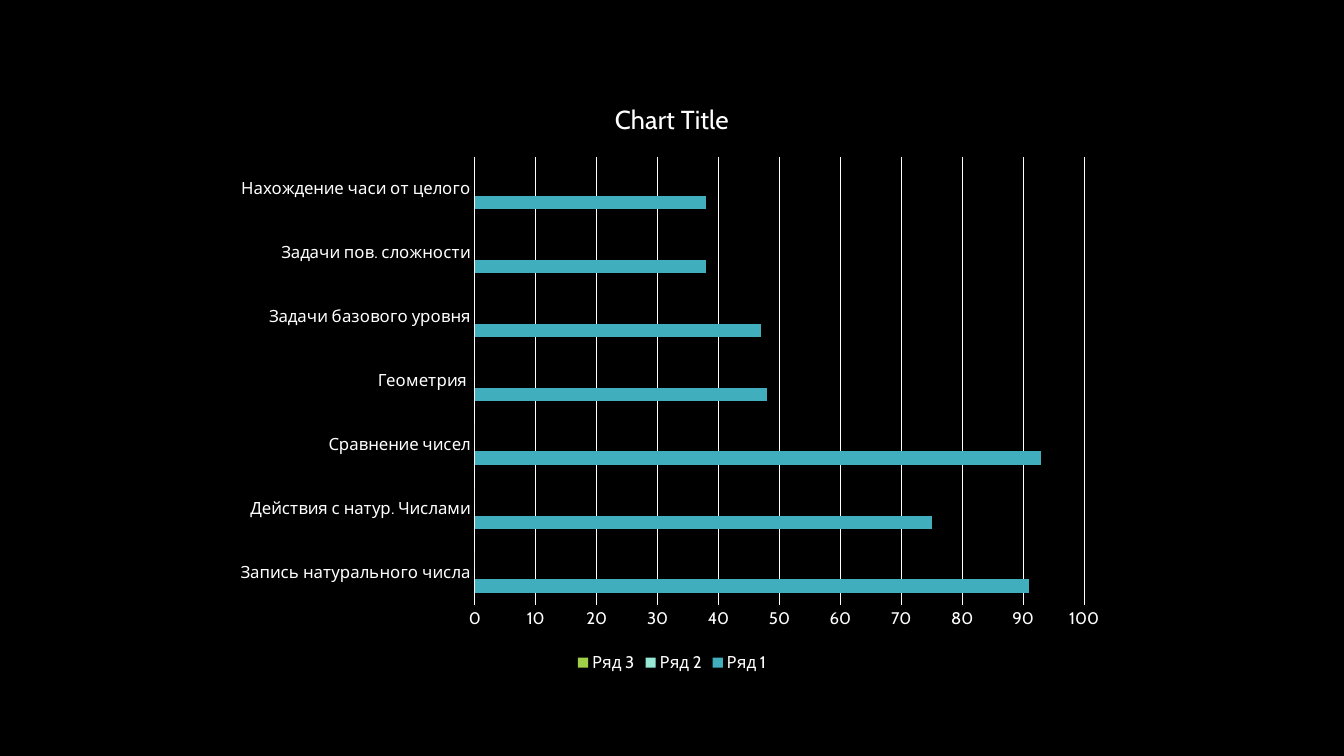
from lxml import etree
from pptx import Presentation
from pptx.chart.data import CategoryChartData
from pptx.dml.color import RGBColor
from pptx.enum.chart import XL_CHART_TYPE, XL_LEGEND_POSITION, XL_TICK_MARK
from pptx.oxml.ns import qn
from pptx.util import Pt

BAR_CLUSTERED = XL_CHART_TYPE.BAR_CLUSTERED
LEGEND_BOTTOM = XL_LEGEND_POSITION.BOTTOM
NO_TICKS = XL_TICK_MARK.NONE

BLACK = RGBColor(0x00, 0x00, 0x00)
WHITE = RGBColor(0xFF, 0xFF, 0xFF)
FONT_NAME = "Cabin"

TOPICS = [
    "Запись натурального числа",
    "Действия с натур. Числами",
    "Сравнение чисел",
    " Геометрия ",
    "Задачи базового уровня",
    "Задачи пов. сложности",
    "Нахождение часи от целого",
]
SERIES = [
    ("Ряд 1", [91, 75, 93, 48, 47, 38, 38], RGBColor(0x41, 0xAE, 0xBD)),
    ("Ряд 2", [0, 0, 0, 0, None, None, None], RGBColor(0x97, 0xE9, 0xD5)),
    ("Ряд 3", [0, 0, 0, 0, None, None, None], RGBColor(0xA2, 0xCF, 0x49)),
]
# Inner plot area as fractions of the chart box
PLOT_AREA = {"x": 0.28, "y": 0.13, "w": 0.68, "h": 0.75}


def style_font(font, size):
    font.name = FONT_NAME
    font.size = Pt(size)
    font.bold = False
    font.color.rgb = WHITE


def style_line(line):
    line.color.rgb = WHITE
    line.width = Pt(0.75)


def style_axis(axis):
    axis.major_tick_mark = NO_TICKS
    axis.minor_tick_mark = NO_TICKS
    style_font(axis.tick_labels.font, 12)


def place_plot(chart, fractions):
    plot_area = chart.element.find(".//" + qn("c:plotArea"))
    for old_layout in plot_area.findall(qn("c:layout")):
        plot_area.remove(old_layout)
    layout = etree.Element(qn("c:layout"))
    manual = etree.SubElement(layout, qn("c:manualLayout"))
    settings = {"layoutTarget": "inner", "xMode": "edge", "yMode": "edge", **fractions}
    for tag, value in settings.items():
        etree.SubElement(manual, qn("c:" + tag)).set("val", str(value))
    plot_area.insert(0, layout)


def add_results_chart(page, left, top, width, height):
    data = CategoryChartData()
    data.categories = TOPICS
    for name, values, _ in SERIES:
        data.add_series(name, values)
    chart = page.shapes.add_chart(
        BAR_CLUSTERED, Pt(left), Pt(top), Pt(width), Pt(height), data
    ).chart
    style_font(chart.font, 10)

    # Title
    chart.has_title = True
    title = chart.chart_title
    title.include_in_layout = False
    title.text_frame.text = "Chart Title"
    style_font(title.text_frame.paragraphs[0].runs[0].font, 18.6)

    # Bars
    plot = chart.plots[0]
    plot.gap_width = 182
    plot.overlap = 0
    plot.vary_by_categories = False
    for series, (_, _, color) in zip(plot.series, SERIES):
        series.format.fill.solid()
        series.format.fill.fore_color.rgb = color
        series.invert_if_negative = False

    # Axes
    style_axis(chart.category_axis)
    style_line(chart.category_axis.format.line)
    value_axis = chart.value_axis
    style_axis(value_axis)
    value_axis.minimum_scale = 0
    value_axis.maximum_scale = 100
    value_axis.major_unit = 10
    value_axis.format.line.fill.background()
    value_axis.has_major_gridlines = True
    style_line(value_axis.major_gridlines.format.line)

    # Legend
    chart.has_legend = True
    chart.legend.position = LEGEND_BOTTOM
    chart.legend.include_in_layout = False
    style_font(chart.legend.font, 12)

    place_plot(chart, PLOT_AREA)


def main():
    deck = Presentation()
    deck.slide_width = Pt(960)
    deck.slide_height = Pt(540)
    page = deck.slides.add_slide(deck.slide_layouts[6])
    page.background.fill.solid()
    page.background.fill.fore_color.rgb = BLACK
    add_results_chart(page, left=160, top=56.67, width=640, height=426.67)
    deck.save("out.pptx")


if __name__ == "__main__":
    main()
